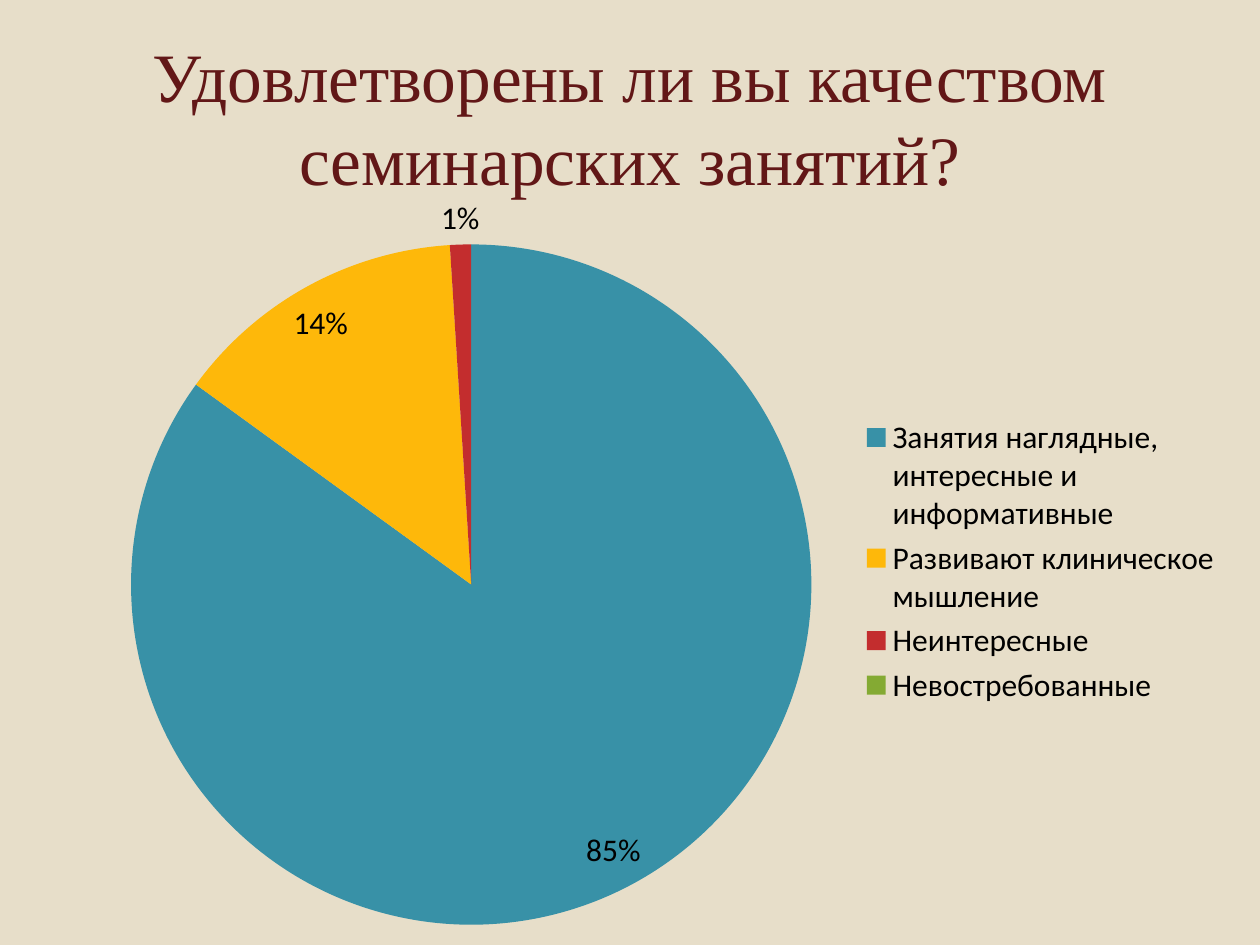
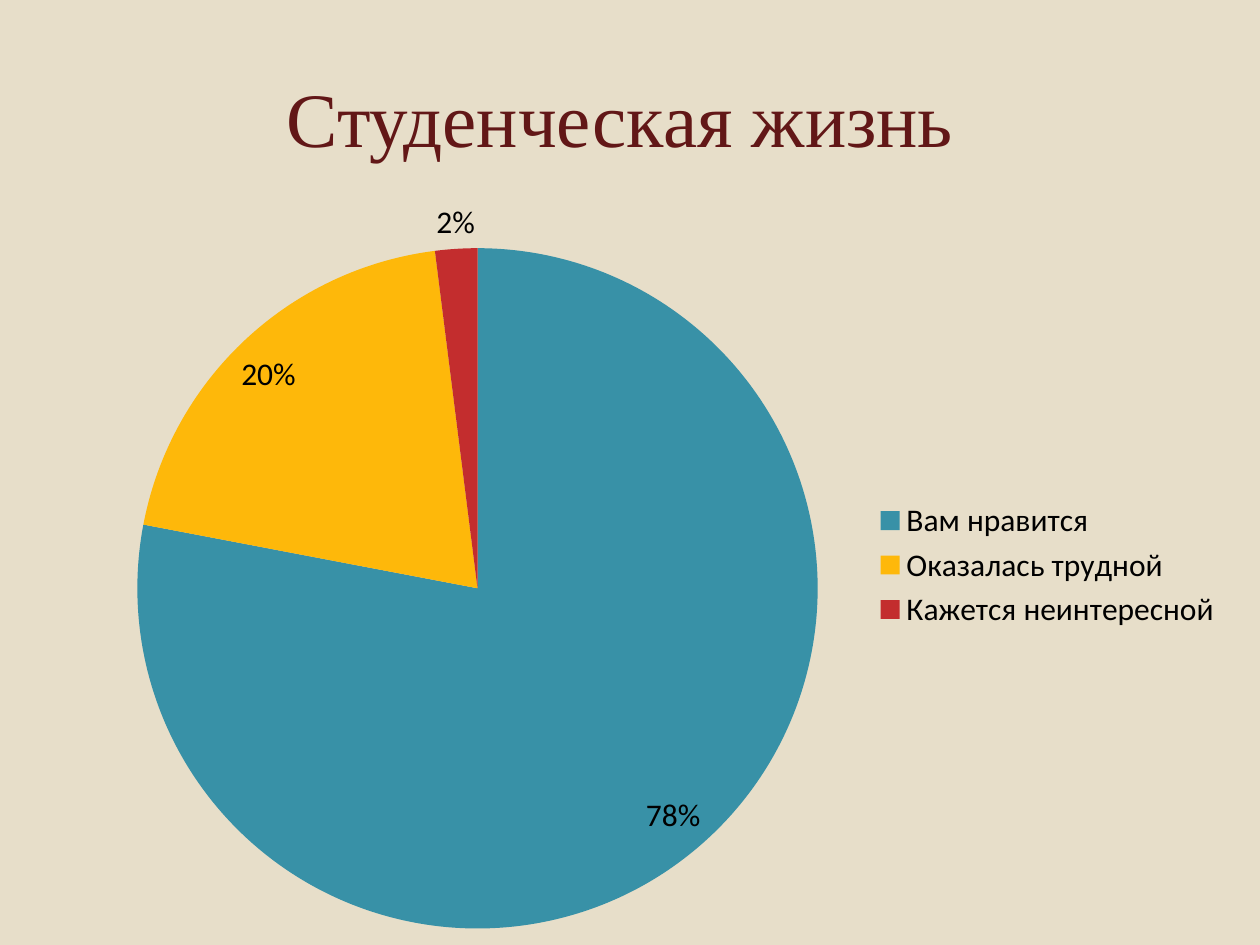
from dataclasses import dataclass

from lxml import etree
from pptx import Presentation
from pptx.chart.data import CategoryChartData
from pptx.chart.chart import Chart
from pptx.dml.color import RGBColor
from pptx.enum.chart import XL_CHART_TYPE, XL_LABEL_POSITION, XL_LEGEND_POSITION
from pptx.enum.text import MSO_ANCHOR, PP_ALIGN
from pptx.oxml import parse_xml
from pptx.oxml.ns import nsdecls, qn
from pptx.presentation import Presentation as Deck
from pptx.slide import Slide
from pptx.util import Inches, Pt

PIE = XL_CHART_TYPE.PIE
BEST_FIT = XL_LABEL_POSITION.BEST_FIT
LEGEND_RIGHT = XL_LEGEND_POSITION.RIGHT
MIDDLE = MSO_ANCHOR.MIDDLE
CENTER = PP_ALIGN.CENTER


@dataclass(frozen=True)
class Theme:
    background: RGBColor = RGBColor.from_string("E7DEC9")
    title: RGBColor = RGBColor.from_string("621717")
    text: RGBColor = RGBColor.from_string("000000")
    slices: tuple[str, ...] = ("3891A7", "FEB80A", "C32D2E", "84AA33")
    title_font: str = "Times New Roman"
    chart_font: str = "Calibri"
    chart_size: float = 18


@dataclass(frozen=True)
class Survey:
    question: str
    question_size: float
    answers: dict[str, int]
    chart_top: float
    pie_left: float


THEME = Theme()
CHART_LEFT, CHART_WIDTH, CHART_HEIGHT = 0.67, 9.13, 6.03
PIE_DIAMETER, PIE_OFFSET = 5.4, 0.5

SURVEYS = (
    Survey(
        "Удовлетворены ли вы качеством семинарских занятий?",
        39.6,
        {
            "Занятия наглядные, интересные и информативные": 85,
            "Развивают клиническое мышление ": 14,
            "Неинтересные": 1,
            "Невостребованные": 0,
        },
        chart_top=1.44,
        pie_left=1.04,
    ),
    Survey(
        "Студенческая жизнь ",
        44,
        {"Вам нравится": 78, "Оказалась трудной": 20, "Кажется неинтересной": 2},
        chart_top=1.47,
        pie_left=1.09,
    ),
)


def add_title(slide: Slide, survey: Survey) -> None:
    box = slide.shapes.add_textbox(Inches(0.5), Inches(0.3), Inches(9), Inches(1.25))
    frame = box.text_frame
    frame.word_wrap = True
    frame.vertical_anchor = MIDDLE
    paragraph = frame.paragraphs[0]
    paragraph.alignment = CENTER
    run = paragraph.add_run()
    run.text = survey.question
    run.font.name = THEME.title_font
    run.font.size = Pt(survey.question_size)
    run.font.color.rgb = THEME.title


def place_pie(chart: Chart, pie_left: float) -> None:
    """Fix the plot area so that the pie keeps its diameter beside the legend."""
    plot_area = chart.plots[0]._element.getparent()
    for old in plot_area.findall(qn("c:layout")):
        plot_area.remove(old)
    layout = parse_xml(f"<c:layout {nsdecls('c')}/>")
    manual = etree.SubElement(layout, qn("c:manualLayout"))
    settings = {
        "layoutTarget": "inner",
        "xMode": "edge",
        "yMode": "edge",
        "x": (pie_left - CHART_LEFT) / CHART_WIDTH,
        "y": PIE_OFFSET / CHART_HEIGHT,
        "w": PIE_DIAMETER / CHART_WIDTH,
        "h": PIE_DIAMETER / CHART_HEIGHT,
    }
    for tag, value in settings.items():
        etree.SubElement(manual, qn(f"c:{tag}")).set("val", str(value))
    plot_area.insert(0, layout)


def add_pie(slide: Slide, survey: Survey) -> None:
    data = CategoryChartData()
    data.categories = survey.answers.keys()
    data.add_series("Series 1", survey.answers.values())
    chart = slide.shapes.add_chart(
        PIE, Inches(CHART_LEFT), Inches(survey.chart_top),
        Inches(CHART_WIDTH), Inches(CHART_HEIGHT), data,
    ).chart
    chart.has_title = False
    chart.font.name = THEME.chart_font
    chart.font.size = Pt(THEME.chart_size)
    chart.font.color.rgb = THEME.text
    chart.has_legend = True
    chart.legend.position = LEGEND_RIGHT
    chart.legend.include_in_layout = False
    chart.plots[0].vary_by_categories = True

    series = chart.plots[0].series[0]
    labels = series.data_labels
    labels.show_percentage = True
    labels.show_value = False
    labels.number_format = "0%"
    labels.number_format_is_linked = False
    labels.position = BEST_FIT
    for index, share in enumerate(survey.answers.values()):
        fill = series.points[index].format.fill
        fill.solid()
        fill.fore_color.rgb = RGBColor.from_string(THEME.slices[index])
        if share == 0:
            hidden = parse_xml(
                f'<c:dLbl {nsdecls("c")}><c:idx val="{index}"/><c:delete val="1"/></c:dLbl>'
            )
            labels._element.insert(0, hidden)
    place_pie(chart, survey.pie_left)


def add_survey_slide(deck: Deck, survey: Survey) -> None:
    slide = deck.slides.add_slide(deck.slide_layouts[6])
    slide.background.fill.solid()
    slide.background.fill.fore_color.rgb = THEME.background
    add_title(slide, survey)
    add_pie(slide, survey)


def main() -> None:
    deck = Presentation()
    deck.slide_width, deck.slide_height = Inches(10), Inches(7.5)
    for survey in SURVEYS:
        add_survey_slide(deck, survey)
    deck.save("out.pptx")


if __name__ == "__main__":
    main()
